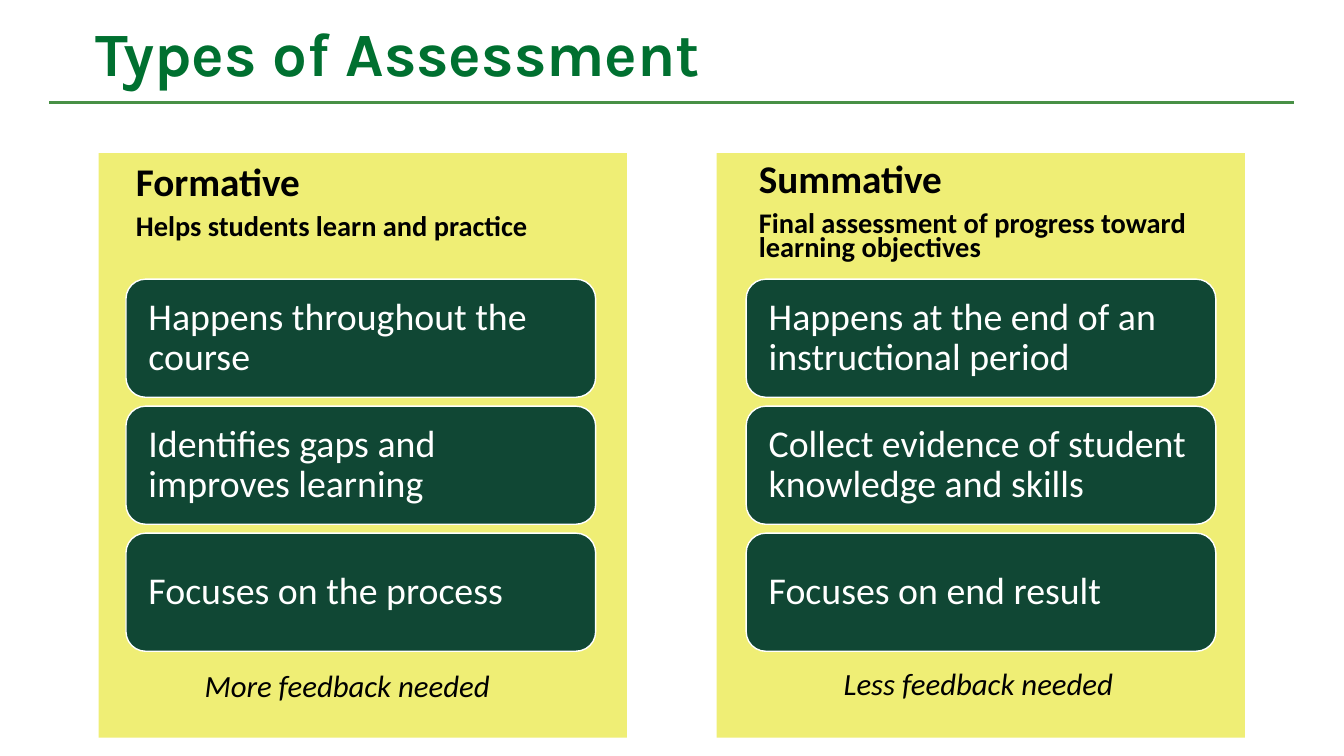
from lxml import etree
from pptx import Presentation
from pptx.dml.color import RGBColor
from pptx.enum.shapes import MSO_CONNECTOR as CONN, MSO_SHAPE as SHAPE
from pptx.enum.text import MSO_ANCHOR as ANCHOR, PP_ALIGN as ALIGN
from pptx.oxml.ns import qn
from pptx.util import Pt

GREEN, RULE, YELLOW = "007030", "489046", "EFEE75"
DARK, WHITE, BLACK = "104734", "FFFFFF", "000000"
PANEL_W, PANEL_H = 377.3, 417.6
CARD_W, CARD_H, CARD_PITCH = 335.5, 84.4, 90.7


def color(hex_code):
    return RGBColor.from_string(hex_code)


def style(p, size, hex_code, name="Calibri", bold=False, italic=False):
    p.font.name, p.font.size = name, Pt(size)
    p.font.bold, p.font.italic = bold, italic
    p.font.color.rgb = color(hex_code)


def add_box(s, kind, x, y, w, h, fill):
    sp = s.shapes.add_shape(kind, Pt(x), Pt(y), Pt(w), Pt(h))
    sp.shadow.inherit = False
    sp.fill.solid()
    sp.fill.fore_color.rgb = color(fill)
    sp.line.fill.background()
    return sp


def add_text(s, x, y, w, h, lines, anchor=ANCHOR.TOP):
    """Add a wrapping text box and return its paragraphs."""
    tf = s.shapes.add_textbox(Pt(x), Pt(y), Pt(w), Pt(h)).text_frame
    tf.word_wrap = True
    tf.vertical_anchor = anchor
    tf.text = "\n".join(lines)
    return tf.paragraphs


def add_title(s, x, y, w, h, text):
    """Add the slide title with the rule that runs below it."""
    p = add_text(s, x, y, w, h, [text])[0]
    p.line_spacing = 0.9
    style(p, 44, GREEN, name="Karla", bold=True)
    rule_y = Pt(y + 60.5)
    rule = s.shapes.add_connector(CONN.STRAIGHT, Pt(x - 25.9), rule_y,
                                  Pt(x + w + 35.3), rule_y)
    rule.line.color.rgb = color(RULE)
    rule.line.width = Pt(2.25)
    etree.SubElement(rule._element.spPr, qn("a:effectLst"))


def add_heading(s, x, y, w, h, name, summary):
    head, sub = add_text(s, x, y, w, h, [name, summary], ANCHOR.BOTTOM)
    head.line_spacing = sub.line_spacing = 0.7
    sub.space_before = Pt(10)
    style(head, 28, BLACK, bold=True)
    style(sub, 20.3, BLACK, bold=True)


def add_card(s, x, y, text):
    card = add_box(s, SHAPE.ROUNDED_RECTANGLE, x, y, CARD_W, CARD_H, DARK)
    card.line.color.rgb = color(WHITE)
    card.line.width = Pt(1)
    tf = card.text_frame
    tf.word_wrap = True
    tf.vertical_anchor = ANCHOR.MIDDLE
    tf.margin_left = tf.margin_right = Pt(12)
    tf.text = text
    p = tf.paragraphs[0]
    p.alignment = ALIGN.LEFT
    p.line_spacing = 0.9
    style(p, 27, WHITE)


def add_panel(s, x, y, heading, heading_box, cards, cards_dx, note, note_at):
    """Add one assessment type; the inner places are offsets from x, y."""
    add_box(s, SHAPE.RECTANGLE, x, y, PANEL_W, PANEL_H, YELLOW)
    dx, dy, w, h = heading_box
    add_heading(s, x + dx, y + dy, w, h, *heading)
    for i, text in enumerate(cards):
        add_card(s, x + cards_dx, y + 90 + i * CARD_PITCH, text)
    dx, dy = note_at
    style(add_text(s, x + dx, y + dy, 273, 34, [note])[0],
          22, BLACK, italic=True)


def main():
    prs = Presentation()
    prs.slide_width, prs.slide_height = Pt(960), Pt(540)
    s = prs.slides.add_slide(prs.slide_layouts[6])
    add_title(s, 61.2, 13, 828, 104.4, "Types of Assessment")
    add_panel(s, 70.5, 109.4,
              ("Formative", "Helps students learn and practice"),
              (19.5, 1.5, 406, 64.8),
              ("Happens throughout the course",
               "Identifies gaps and improves learning",
               "Focuses on the process"),
              19.5, "More feedback needed", (68.5, 363.6))
    add_panel(s, 512, 109.4,
              ("Summative",
               "Final assessment of progress toward learning objectives"),
              (23, 0.8, 345, 80.6),
              ("Happens at the end of an instructional period",
               "Collect evidence of student knowledge and skills",
               "Focuses on end result"),
              21, "Less feedback needed", (83.5, 362.2))
    prs.save("out.pptx")


if __name__ == "__main__":
    main()
